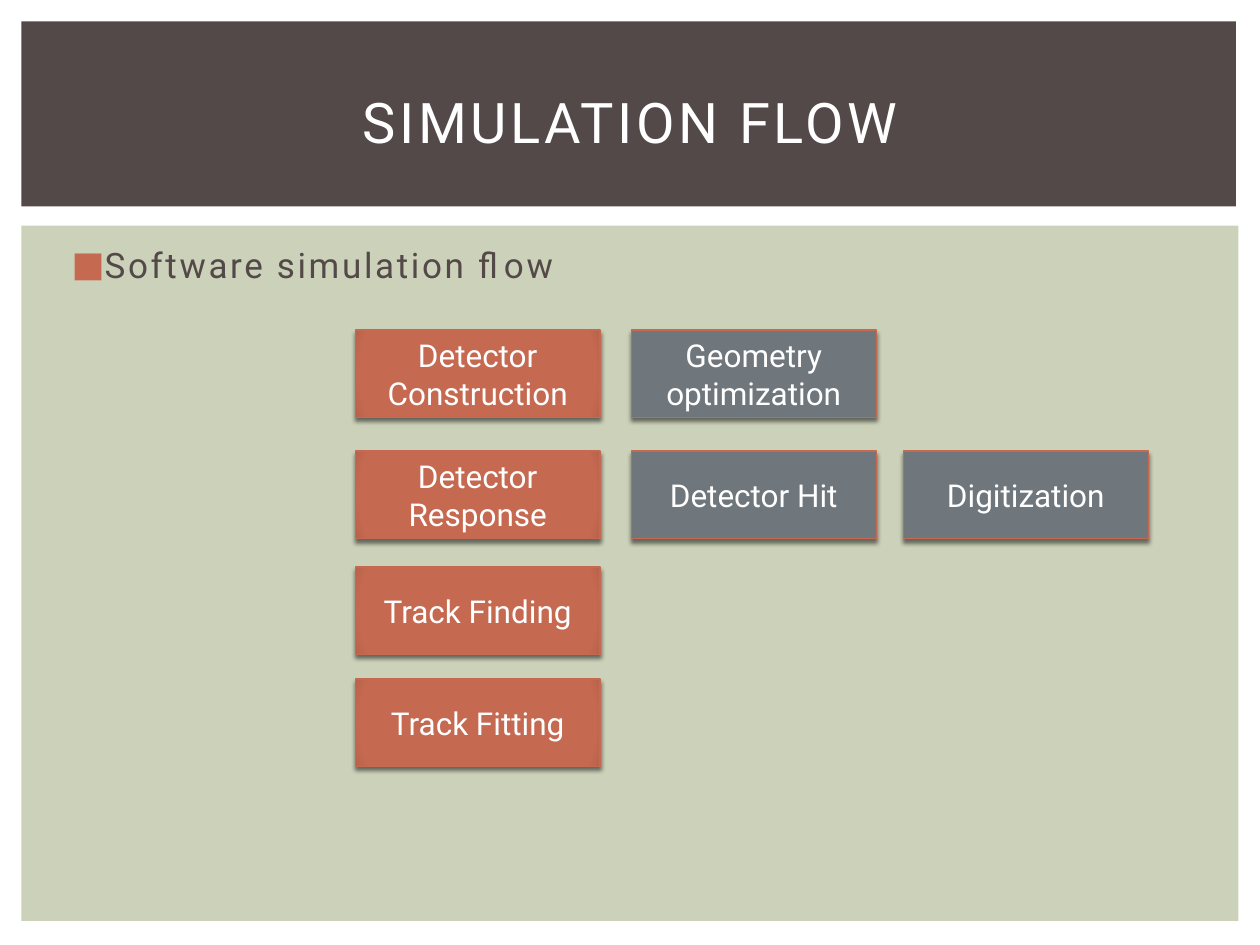
from dataclasses import dataclass

from lxml.etree import SubElement
from pptx import Presentation
from pptx.dml.color import RGBColor
from pptx.enum.shapes import MSO_SHAPE as Shape
from pptx.enum.text import MSO_ANCHOR as Anchor, MSO_AUTO_SIZE as AutoSize, PP_ALIGN as Align
from pptx.oxml.ns import qn
from pptx.util import Pt

COLORS = {
    "header": "534949",
    "panel": "CCD1B9",
    "stage": "C66951",
    "stage_edge": "B8624B",
    "detail": "6F777D",
    "white": "FFFFFF",
    "shadow": "000000",
}
FONT = "Roboto"
COLUMNS = (203, 360.7, 516.2)
ROWS = (188.6, 257.8, 324, 388)
BOX_SIZE = (140, 50)


@dataclass(frozen=True)
class Step:
    label: str
    column: int
    row: int


STEPS = (
    Step("Detector Construction", 0, 0),
    Step("Detector Response", 0, 1),
    Step("Track Finding", 0, 2),
    Step("Track Fitting", 0, 3),
    Step("Digitization", 2, 1),
    Step("Detector Hit", 1, 1),
    Step("Geometry optimization", 1, 0),
)


def rgb(name: str) -> RGBColor:
    return RGBColor.from_string(COLORS[name])


def add_node(parent, tag: str, **attributes):
    return SubElement(parent, qn(tag), {key: str(value) for key, value in attributes.items()})


def add_text(para, text: str, size: float, color: str, spacing: float = 0) -> None:
    span = para.add_run()
    span.text = text
    span.font.name = FONT
    span.font.size = Pt(size)
    span.font.color.rgb = rgb(color)
    if spacing:
        span.font._element.set("spc", str(round(spacing * 100)))


def add_box(page, left: float, top: float, width: float, height: float, color: str):
    box = page.shapes.add_shape(Shape.RECTANGLE, Pt(left), Pt(top), Pt(width), Pt(height))
    box.fill.solid()
    box.fill.fore_color.rgb = rgb(color)
    box.line.fill.background()
    box.shadow.inherit = False
    return box


def shade_edges(box) -> None:
    properties = box._element.spPr
    solid = properties.find(qn("a:solidFill"))
    gradient = add_node(properties, "a:gradFill", rotWithShape=1)
    stops = add_node(gradient, "a:gsLst")
    for position, name in ((0, "stage"), (90, "stage"), (100, "stage_edge")):
        stop = add_node(stops, "a:gs", pos=position * 1000)
        add_node(stop, "a:srgbClr", val=COLORS[name])
    circle = add_node(gradient, "a:path", path="circle")
    add_node(circle, "a:fillToRect", l=100000, t=100000, r=100000, b=100000)
    properties.replace(solid, gradient)


def add_shadow(box) -> None:
    effects = box._element.spPr.find(qn("a:effectLst"))
    shadow = add_node(effects, "a:outerShdw", blurRad=Pt(2.5), dist=Pt(2),
                      dir=90 * 60000, rotWithShape=0)
    color = add_node(shadow, "a:srgbClr", val=COLORS["shadow"])
    add_node(color, "a:alpha", val=50000)


def add_step(page, step: Step) -> None:
    is_stage = step.column == 0
    box = add_box(page, COLUMNS[step.column], ROWS[step.row], *BOX_SIZE,
                  "stage" if is_stage else "detail")
    if is_stage:
        shade_edges(box)
    box.line.color.rgb = rgb("stage")
    box.line.width = Pt(0.79)
    add_shadow(box)
    frame = box.text_frame
    frame.word_wrap = True
    frame.vertical_anchor = Anchor.MIDDLE
    para = frame.paragraphs[0]
    para.alignment = Align.CENTER
    add_text(para, step.label, 18, "white")


def place_title(page, text: str) -> None:
    title = page.shapes.title
    title.left, title.top, title.width, title.height = Pt(30.2), Pt(28), Pt(660.2), Pt(82.8)
    page.shapes._spTree.append(title._element)
    frame = title.text_frame
    frame.auto_size = AutoSize.NONE
    frame.word_wrap = True
    frame.vertical_anchor = Anchor.MIDDLE
    para = frame.paragraphs[0]
    para.alignment = Align.CENTER
    add_text(para, text, 32, "white", 2)


def add_bullet(page, text: str) -> None:
    box = page.shapes.add_textbox(Pt(30.2), Pt(135.4), Pt(661.7), Pt(347))
    box.text_frame.word_wrap = True
    para = box.text_frame.paragraphs[0]
    properties = para._element.get_or_add_pPr()
    properties.set("marL", str(Pt(21.6)))
    properties.set("indent", str(Pt(-18)))
    add_node(add_node(properties, "a:spcBef"), "a:spcPct", val=20000)
    add_node(add_node(properties, "a:buClr"), "a:srgbClr", val=COLORS["stage"])
    add_node(properties, "a:buFont", typeface=FONT)
    add_node(properties, "a:buChar", char="■")
    add_text(para, text, 20, "header", 1.5)


def main() -> None:
    deck = Presentation()
    deck.slide_width, deck.slide_height = Pt(720), Pt(540)
    page = deck.slides.add_slide(deck.slide_layouts.get_by_name("Title Only"))
    add_box(page, 12.2, 128.9, 695.5, 397.4, "panel")
    add_box(page, 12.2, 12.2, 694.1, 105.8, "header")
    add_bullet(page, "Software simulation flow")
    place_title(page, "SIMULATION FLOW")
    for step in STEPS:
        add_step(page, step)
    deck.save("out.pptx")


if __name__ == "__main__":
    main()
